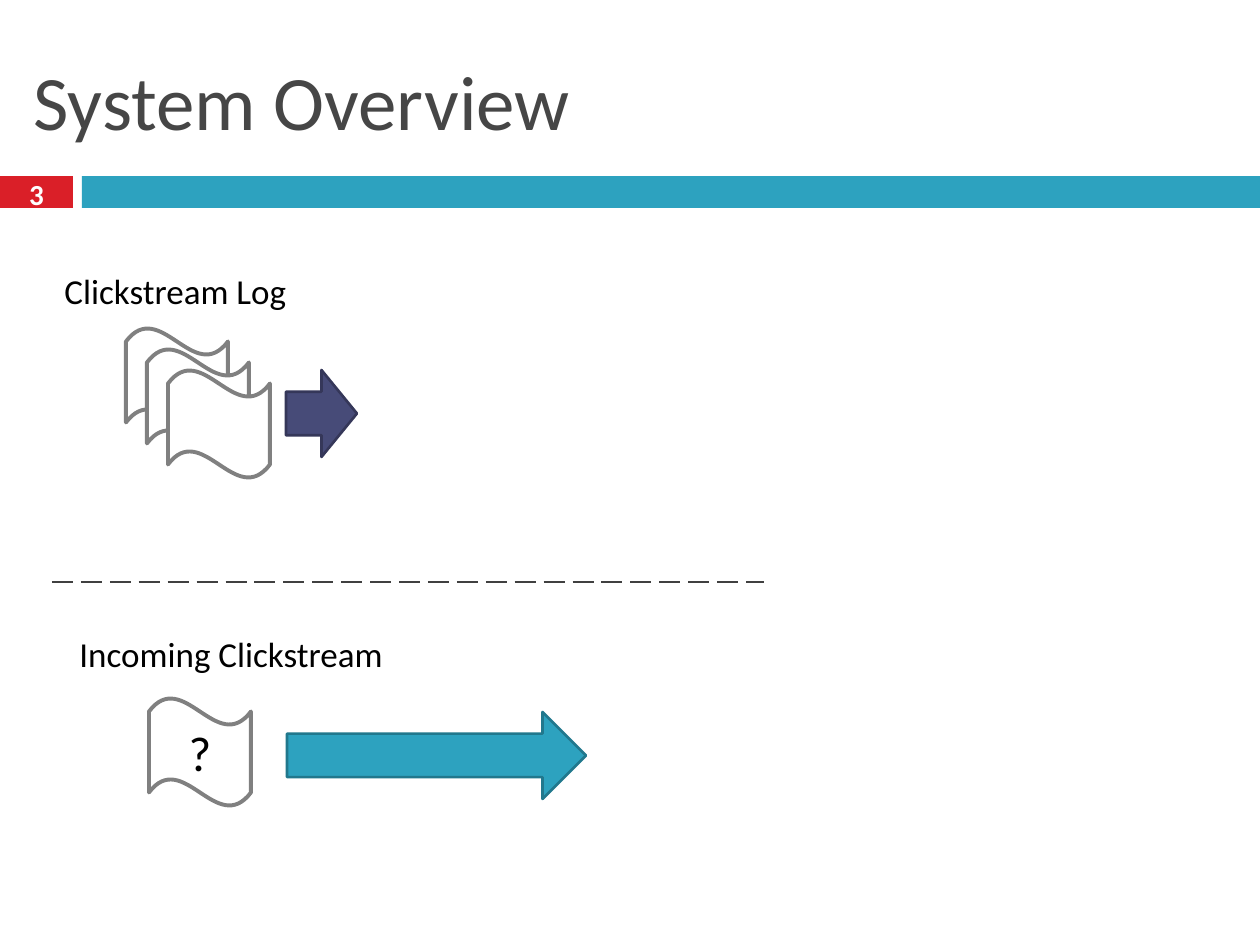
from lxml import etree
from pptx import Presentation
from pptx import util as u
from pptx.dml.color import RGBColor
from pptx.enum import dml, shapes, text
from pptx.oxml.ns import qn

PX = 914400 / 126
RED = RGBColor(0xDA, 0x1F, 0x28)
TEAL = RGBColor(0x2D, 0xA2, 0xBF)
DARK_TEAL = RGBColor(0x21, 0x78, 0x8D)
INDIGO = RGBColor(0x47, 0x4B, 0x78)
DARK_INDIGO = RGBColor(0x35, 0x37, 0x59)
SLATE = RGBColor(0x46, 0x46, 0x46)
CHARCOAL = RGBColor(0x40, 0x40, 0x40)
GRAY = RGBColor(0x80, 0x80, 0x80)
WHITE = RGBColor(0xFF, 0xFF, 0xFF)
BLACK = RGBColor(0, 0, 0)

prs = Presentation()
prs.slide_width, prs.slide_height = u.Inches(10), u.Inches(7.5)
slide = prs.slides.add_slide(prs.slide_layouts[5])


def draw(kind, box, fill, line=None, width=0):
    part = slide.shapes.add_shape(kind, *[round(n * PX) for n in box])
    part.shadow.inherit = False
    part.fill.solid()
    part.fill.fore_color.rgb = fill
    if line is None:
        part.line.fill.background()
    else:
        part.line.color.rgb = line
        part.line.width = u.Pt(width)
    return part


def write(part, words, size, color, align=text.PP_ALIGN.LEFT, bold=False):
    paragraph = part.text_frame.paragraphs[0]
    paragraph.alignment = align
    run = paragraph.add_run()
    run.text = words
    run.font.name = "Calibri"
    run.font.size = u.Pt(size)
    run.font.bold = bold
    run.font.color.rgb = color


draw(shapes.MSO_SHAPE.RECTANGLE, (0, 176, 73, 32), RED)
draw(shapes.MSO_SHAPE.RECTANGLE, (82, 176, 1178, 32), TEAL)

title = slide.shapes.title
title.left, title.top, title.width, title.height = [round(n * PX) for n in (21, 32, 1218, 136)]
title.text_frame.vertical_anchor = text.MSO_ANCHOR.MIDDLE
write(title, "System Overview", 44, SLATE)

for step in range(3):
    offset = 21 * step
    draw(shapes.MSO_SHAPE.WAVE, (126 + offset, 328 + offset, 102, 108), WHITE, GRAY, 2.25)
draw(shapes.MSO_SHAPE.RIGHT_ARROW, (286, 370, 71, 87), INDIGO, DARK_INDIGO, 1.5)

divider = slide.shapes.add_connector(
    shapes.MSO_CONNECTOR.STRAIGHT, *[round(n * PX) for n in (52, 582, 764, 582)])
divider.line.color.rgb = CHARCOAL
divider.line.width = u.Pt(1.5)
divider.line.dash_style = dml.MSO_LINE.LONG_DASH
etree.SubElement(divider._element.spPr, qn("a:effectLst"))

query = draw(shapes.MSO_SHAPE.WAVE, (149, 698, 102, 108), WHITE, GRAY, 2.25)
query.text_frame.vertical_anchor = text.MSO_ANCHOR.MIDDLE
write(query, "?", 28, BLACK, text.PP_ALIGN.CENTER)
draw(shapes.MSO_SHAPE.RIGHT_ARROW, (287, 712, 299, 87), TEAL, DARK_TEAL, 1.5)

for words, box in (("Clickstream Log", (52, 263, 251, 55)),
                   ("Incoming Clickstream", (67, 626, 333, 55))):
    label = slide.shapes.add_textbox(*[round(n * PX) for n in box])
    label.text_frame.word_wrap = False
    label.text_frame.auto_size = text.MSO_AUTO_SIZE.SHAPE_TO_FIT_TEXT
    write(label, words, 20, BLACK)

page_number = slide.shapes.add_textbox(*[round(n * PX) for n in (0, 173, 73, 42)])
page_number.text_frame.word_wrap = True
page_number.text_frame.vertical_anchor = text.MSO_ANCHOR.MIDDLE
write(page_number, "3", 16.6, WHITE, text.PP_ALIGN.CENTER, True)

prs.save("out.pptx")
